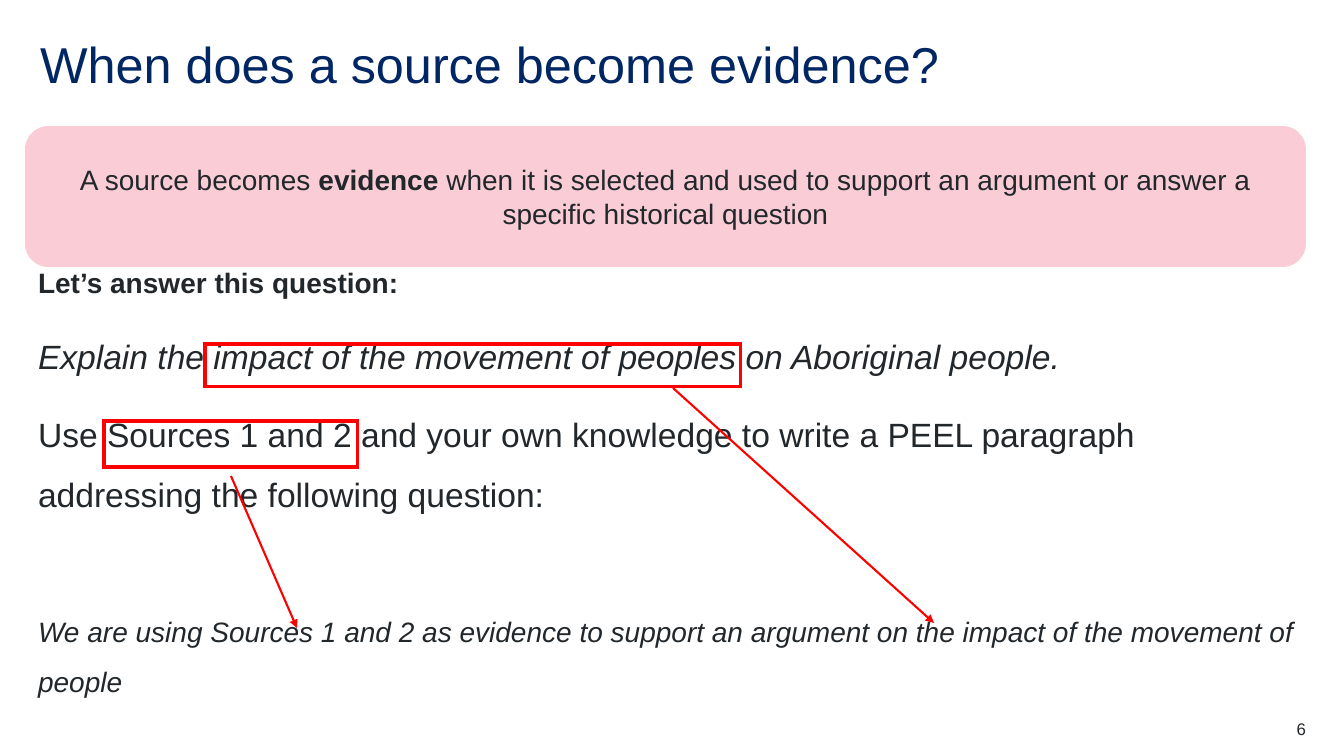
"""Build a slide explaining when a historical source becomes evidence."""
import pptx
import pptx.dml.color
import pptx.enum.shapes
import pptx.enum.text
import pptx.oxml
import pptx.oxml.ns
import pptx.util

NAVY = pptx.dml.color.RGBColor(0x00, 0x26, 0x64)
INK = pptx.dml.color.RGBColor(0x22, 0x27, 0x2B)
PINK = pptx.dml.color.RGBColor(0xFA, 0xCD, 0xD6)
RED = pptx.dml.color.RGBColor(0xFF, 0x00, 0x00)
SHAPES = pptx.enum.shapes.MSO_SHAPE
ALIGN = pptx.enum.text.PP_ALIGN
ANCHOR = pptx.enum.text.MSO_ANCHOR
NAMESPACE = pptx.oxml.ns.nsdecls("a")


def px(*lengths):
    return [pptx.util.Emu(round(length * 12192000 / 1344)) for length in lengths]


def add_text(slide, box, paragraphs, size, color=INK):
    frame = slide.shapes.add_textbox(*px(*box)).text_frame
    frame.word_wrap = True
    frame.margin_left = frame.margin_top = frame.margin_right = frame.margin_bottom = 0
    frame.text = "\n".join(paragraphs)
    for paragraph in frame.paragraphs:
        for run in paragraph.runs:
            run.font.name = "Arial"
            run.font.size = pptx.util.Pt(size)
            run.font.color.rgb = color
    return frame


presentation = pptx.Presentation()
presentation.slide_width, presentation.slide_height = px(1344, 756)
slide = presentation.slides.add_slide(presentation.slide_layouts[6])

title = add_text(slide, (40, 37, 1266, 61), ["When does a source become evidence?"], 36, NAVY)
title.vertical_anchor = ANCHOR.MIDDLE
title.paragraphs[0].line_spacing = 0.9

definition = slide.shapes.add_shape(SHAPES.ROUNDED_RECTANGLE, *px(25, 126, 1281, 141))
definition.shadow.inherit = False
definition.fill.solid()
definition.fill.fore_color.rgb = PINK
definition.line.fill.background()
definition.text_frame.word_wrap = True
definition.text_frame.vertical_anchor = ANCHOR.MIDDLE
paragraph = definition.text_frame.paragraphs[0]
paragraph.alignment = ALIGN.CENTER
for text, bold in (
    ("A source becomes ", False),
    ("evidence", True),
    (" when it is selected and used to support an argument or answer a specific historical question", False),
):
    run = paragraph.add_run()
    run.text = text
    run.font.name = "Arial"
    run.font.size = pptx.util.Pt(20)
    run.font.bold = bold
    run.font.color.rgb = INK

body_lines = [
    ("Let’s answer this question:", 20, True, False),
    ("Explain the impact of the movement of peoples on Aboriginal people.", 24, False, True),
    ("Use Sources 1 and 2 and your own knowledge to write a PEEL paragraph "
     "addressing the following question:", 24, False, False),
    ("We are using Sources 1 and 2 as evidence to support an argument on the impact "
     "of the movement of people", 20, False, True),
]
body = add_text(slide, (38, 249, 1266, 467), [line[0] for line in body_lines], 20)
for paragraph, (text, size, bold, italic) in zip(body.paragraphs, body_lines):
    paragraph.line_spacing = 1.5
    paragraph.space_after = pptx.util.Pt(12)
    font = paragraph.runs[0].font
    font.size, font.bold, font.italic = pptx.util.Pt(size), bold, italic
body.paragraphs[-1].space_before = pptx.util.Pt(47.5)

for box in ((104, 421, 254, 46), (205, 344, 536, 43)):
    highlight = slide.shapes.add_shape(SHAPES.RECTANGLE, *px(*box))
    highlight.shadow.inherit = False
    highlight.fill.background()
    highlight.line.color.rgb = RED
    highlight.line.width = pptx.util.Pt(2.25)
    miter = pptx.oxml.parse_xml(f'<a:miter {NAMESPACE} lim="800000"/>')
    highlight.line._get_or_add_ln().append(miter)

for ends in ((673, 388, 934, 623), (231, 476, 297, 628)):
    arrow = slide.shapes.add_connector(pptx.enum.shapes.MSO_CONNECTOR.STRAIGHT, *px(*ends))
    arrow.line.color.rgb = RED
    arrow.line.width = pptx.util.Pt(1.5)
    tail = pptx.oxml.parse_xml(f'<a:tailEnd {NAMESPACE} type="triangle"/>')
    arrow.line._get_or_add_ln().append(tail)
    arrow._element.spPr.append(pptx.oxml.parse_xml(f'<a:effectLst {NAMESPACE}/>'))

page_number = add_text(slide, (1227, 719, 79, 20), ["6"], 12)
page_number.paragraphs[0].alignment = ALIGN.RIGHT

presentation.save("out.pptx")
